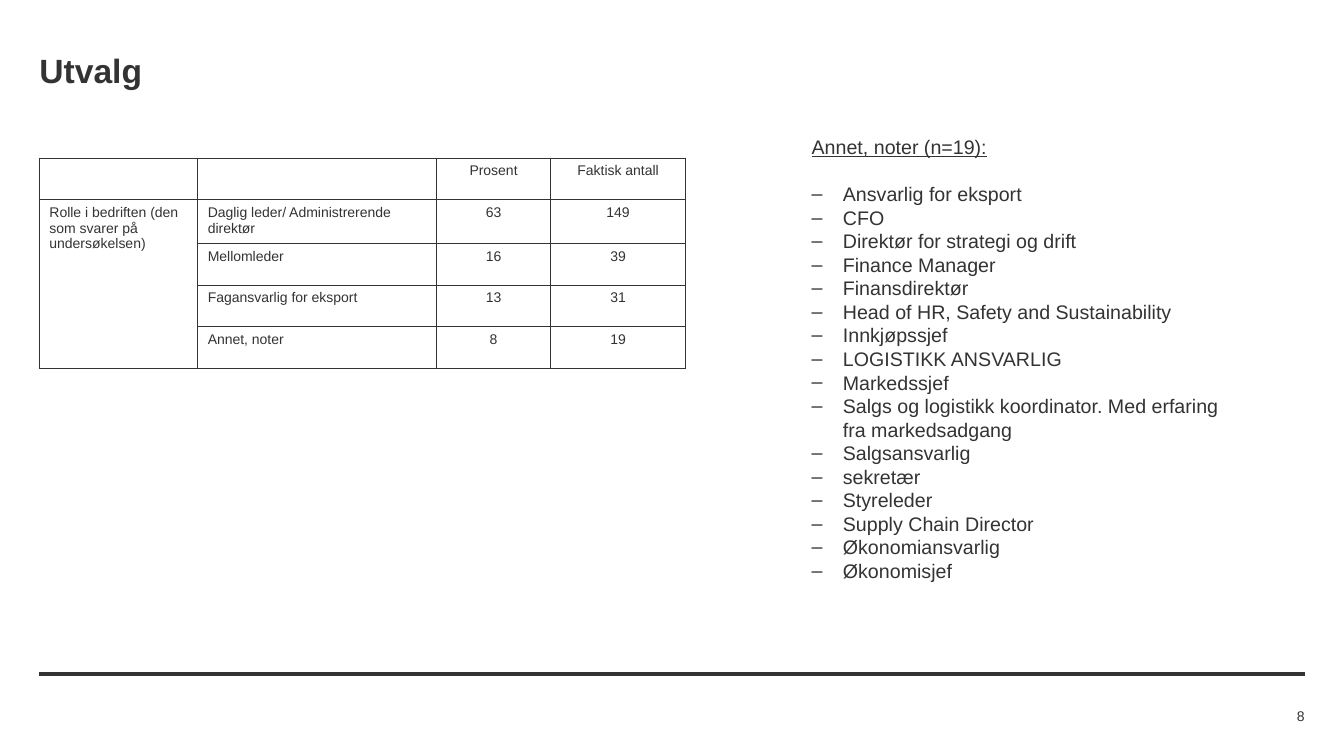
from dataclasses import dataclass

from lxml import etree
from pptx import Presentation
from pptx import util as u
from pptx.dml import color
from pptx.enum import shapes, text
from pptx.oxml import ns

COLORS = {"ink": "333333"}
FONT = "Arial"
SLIDE_WIDTH, SLIDE_HEIGHT = u.Inches(13.33), u.Inches(7.5)
COLUMN, ROW = SLIDE_WIDTH / 100, SLIDE_HEIGHT / 100
LEFT_EDGE, RIGHT_EDGE = 2.93, 97.07
RULE_ROW = 89.2
BULLET_INDENT = u.Inches(0.31)
ALIGN = text.PP_ALIGN


@dataclass
class Area:
    column: float
    row: float
    columns: float
    rows: float

    def lengths(self) -> dict:
        return {"left": u.Emu(int(self.column * COLUMN)), "top": u.Emu(int(self.row * ROW)),
                "width": u.Emu(int(self.columns * COLUMN)), "height": u.Emu(int(self.rows * ROW))}


@dataclass
class TableColumn:
    columns: float
    align: ALIGN
    entries: list


TITLE_AREA = Area(LEFT_EDGE, 6.27, RIGHT_EDGE - LEFT_EDGE, 5.87)
TABLE_AREA = Area(LEFT_EDGE, 20.93, 48.09, 27.55)
NOTES_AREA = Area(59.64, 17.2, 33.6, 61.07)
NUMBER_AREA = Area(89.07, 93.2, 8, 2.93)

TABLE_COLUMNS = [
    TableColumn(11.78, ALIGN.LEFT,
                ["", "Rolle i bedriften (den som svarer på undersøkelsen)", "", "", ""]),
    TableColumn(17.78, ALIGN.LEFT,
                ["", "Daglig leder/ Administrerende direktør", "Mellomleder",
                 "Fagansvarlig for eksport", "Annet, noter"]),
    TableColumn(8.48, ALIGN.CENTER, ["Prosent", "63", "16", "13", "8"]),
    TableColumn(10.05, ALIGN.CENTER, ["Faktisk antall", "149", "39", "31", "19"]),
]
NOTES_HEADING = "Annet, noter (n=19):"
NOTES = [
    "Ansvarlig for eksport",
    "CFO",
    "Direktør for strategi og drift",
    "Finance Manager",
    "Finansdirektør",
    "Head of HR, Safety and Sustainability",
    "Innkjøpssjef",
    "LOGISTIKK ANSVARLIG",
    "Markedssjef",
    "Salgs og logistikk koordinator. Med erfaring fra markedsadgang",
    "Salgsansvarlig",
    "sekretær",
    "Styreleder",
    "Supply Chain Director",
    "Økonomiansvarlig",
    "Økonomisjef",
]

NO_MARGINS = dict.fromkeys(["margin_left", "margin_right", "margin_top", "margin_bottom"], 0)
SINGLE_LINE = {**NO_MARGINS, "word_wrap": True, "auto_size": text.MSO_AUTO_SIZE.NONE,
               "vertical_anchor": text.MSO_ANCHOR.MIDDLE}
NOTES_FRAME = {"word_wrap": True, "auto_size": text.MSO_AUTO_SIZE.SHAPE_TO_FIT_TEXT,
               "vertical_anchor": text.MSO_ANCHOR.TOP}


def apply(target, values: dict) -> None:
    for name, value in values.items():
        setattr(target, name, value)


def write(paragraph, words: str, size: float, align: ALIGN = ALIGN.LEFT, **font_values) -> None:
    paragraph.text = words
    paragraph.alignment = align
    apply(paragraph.font, {"name": FONT, "size": u.Pt(size), **font_values})
    paragraph.font.color.rgb = color.RGBColor.from_string(COLORS["ink"])


def set_bullet(paragraph, character: str = "") -> None:
    properties = paragraph._p.get_or_add_pPr()
    indent = BULLET_INDENT if character else 0
    properties.set("marL", str(indent))
    properties.set("indent", str(-indent))
    if character:
        etree.SubElement(properties, ns.qn("a:buFont"), typeface=FONT)
        etree.SubElement(properties, ns.qn("a:buChar"), char=character)
    else:
        etree.SubElement(properties, ns.qn("a:buNone"))


def set_borders(cell) -> None:
    properties = cell._tc.get_or_add_tcPr()
    for side in ("a:lnL", "a:lnR", "a:lnT", "a:lnB"):
        border = etree.SubElement(properties, ns.qn(side), w=str(u.Pt(1)))
        fill = etree.SubElement(border, ns.qn("a:solidFill"))
        etree.SubElement(fill, ns.qn("a:srgbClr"), val=COLORS["ink"])


def draw_rule(slide) -> None:
    height = int(RULE_ROW * ROW)
    rule = slide.shapes.add_connector(shapes.MSO_CONNECTOR.STRAIGHT, int(LEFT_EDGE * COLUMN),
                                      height, int(RIGHT_EDGE * COLUMN), height)
    rule.line.width = u.Pt(3)
    rule.line.color.rgb = color.RGBColor.from_string(COLORS["ink"])
    etree.SubElement(rule._element.spPr, ns.qn("a:effectLst"))


def draw_title(slide) -> None:
    title = slide.shapes.title
    apply(title, TITLE_AREA.lengths())
    apply(title.text_frame, SINGLE_LINE)
    write(title.text_frame.paragraphs[0], "Utvalg", 24, bold=True)


def draw_table(slide) -> None:
    row_count = len(TABLE_COLUMNS[0].entries)
    table = slide.shapes.add_table(row_count, len(TABLE_COLUMNS), **TABLE_AREA.lengths()).table
    apply(table, {"first_row": False, "horz_banding": False})
    for row in table.rows:
        row.height = int(TABLE_AREA.rows / row_count * ROW)
    for index, column in enumerate(TABLE_COLUMNS):
        table.columns[index].width = int(column.columns * COLUMN)
        for row_index, entry in enumerate(column.entries):
            cell = table.cell(row_index, index)
            set_borders(cell)
            cell.fill.background()
            write(cell.text_frame.paragraphs[0], entry, 10, column.align)
    table.cell(1, 0).merge(table.cell(row_count - 1, 0))


def draw_notes(slide) -> None:
    body = slide.placeholders[1]
    apply(body, NOTES_AREA.lengths())
    frame = body.text_frame
    apply(frame, NOTES_FRAME)
    heading = frame.paragraphs[0]
    set_bullet(heading)
    heading.space_before = u.Pt(0)
    write(heading, NOTES_HEADING, 14, underline=True)
    for index, note in enumerate(NOTES):
        paragraph = frame.add_paragraph()
        set_bullet(paragraph, "–")
        paragraph.space_before = u.Pt(0 if index else 16.8)
        write(paragraph, note, 14)


def draw_number(slide) -> None:
    frame = slide.shapes.add_textbox(**NUMBER_AREA.lengths()).text_frame
    apply(frame, SINGLE_LINE)
    write(frame.paragraphs[0], "8", 10, ALIGN.RIGHT)


def main() -> None:
    presentation = Presentation()
    apply(presentation, {"slide_width": SLIDE_WIDTH, "slide_height": SLIDE_HEIGHT})
    slide = presentation.slides.add_slide(presentation.slide_layouts[1])
    for draw in (draw_rule, draw_title, draw_table, draw_notes, draw_number):
        draw(slide)
    presentation.save("out.pptx")


if __name__ == "__main__":
    main()
